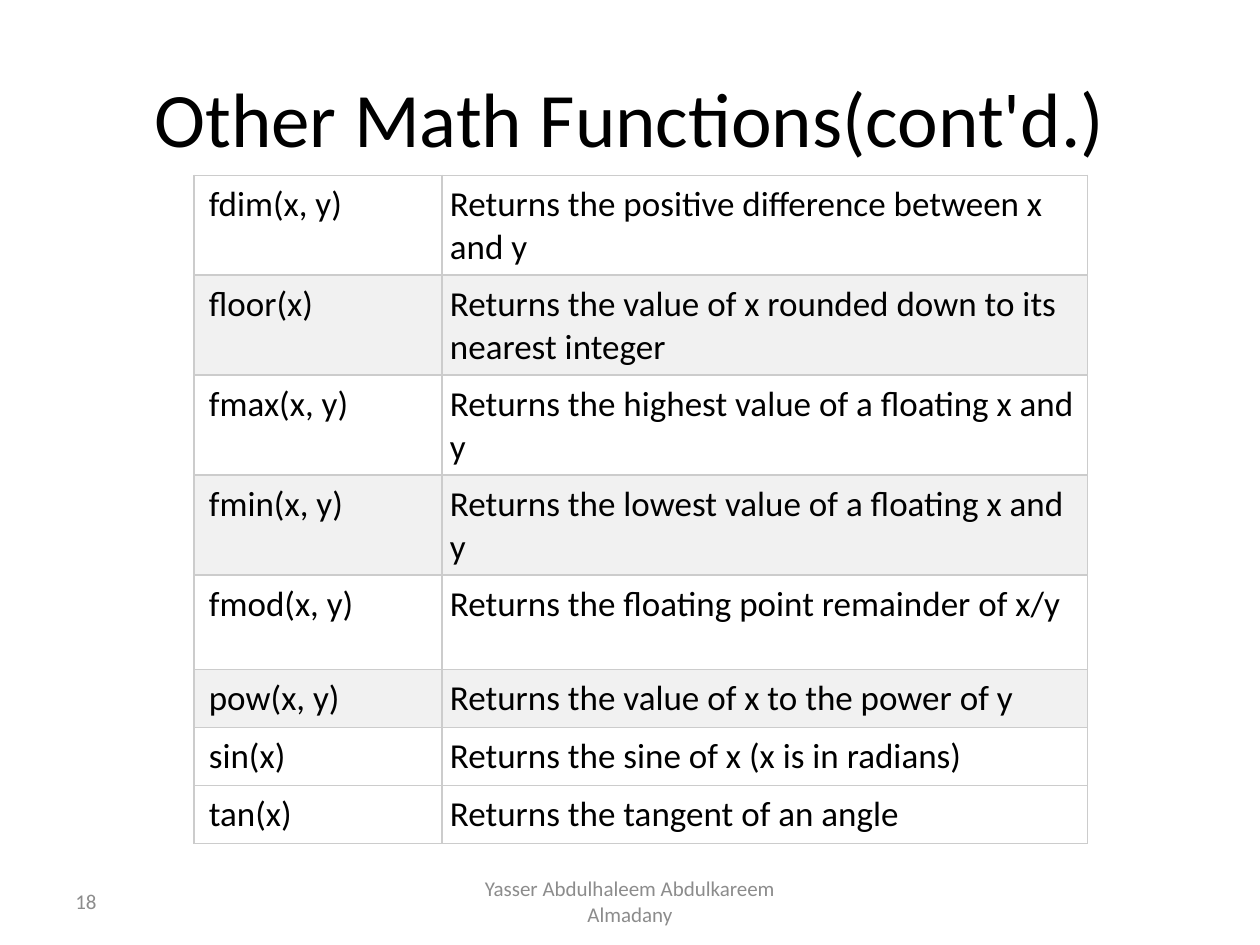
from lxml.etree import SubElement
from pptx import Presentation
from pptx.dml.color import RGBColor
from pptx.enum.text import MSO_ANCHOR, PP_ALIGN
from pptx.oxml.ns import qn
from pptx.util import Cm, Pt

# Content
TITLE = "Other Math Functions(cont'd.)"
AUTHOR = "Yasser Abdulhaleem Abdulkareem Almadany"
PAGE_NUMBER = "18"
# name, description, row height in cm, shaded
FUNCTIONS = [
    ("fdim(x, y)", "Returns the positive difference between x and y", 1.9, False),
    ("floor(x)", "Returns the value of x rounded down to its nearest integer", 1.9, True),
    ("fmax(x, y)", "Returns the highest value of a floating x and y", 1.9, False),
    ("fmin(x, y)", "Returns the lowest value of a floating x and y", 1.9, True),
    ("fmod(x, y)", "Returns the floating point remainder of x/y", 1.9, False),
    ("pow(x, y)", "Returns the value of x to the power of y", 1.17, True),
    ("sin(x)", "Returns the sine of x (x is in radians)", 1.17, False),
    ("tan(x)", "Returns the tangent of an angle", 1.17, False),
]

THEME = {
    "font": "Calibri",
    "title": (44, "000000"),
    "cell": (20, "000000"),
    "footer": (12, "8C8C8C"),
    "plain": "FFFFFF",
    "shaded": "F1F1F1",
    "border": "CCCCCC",
    "border_width": Pt(0.75),
}
COLUMNS = (5, 13.01)
LEFT_INSETS = (0.3, 0.16)
INSET = Cm(0.16)


def write(frame, text, style, align):
    size, color = THEME[style]
    para = frame.paragraphs[0]
    para.alignment = align
    span = para.add_run()
    span.text = text
    span.font.name = THEME["font"]
    span.font.size = Pt(size)
    span.font.color.rgb = RGBColor.from_string(color)


def add_text(page, area, text, style, align):
    box = page.shapes.add_textbox(*(Cm(length) for length in area))
    frame = box.text_frame
    frame.word_wrap = True
    frame.vertical_anchor = MSO_ANCHOR.MIDDLE
    write(frame, text, style, align)


def add_borders(cell):
    properties = cell._tc.get_or_add_tcPr()
    for side in ("a:lnL", "a:lnR", "a:lnT", "a:lnB"):
        line = SubElement(properties, qn(side), w=str(THEME["border_width"]))
        fill = SubElement(line, qn("a:solidFill"))
        SubElement(fill, qn("a:srgbClr"), val=THEME["border"])


def add_function_table(page):
    height = sum(row[2] for row in FUNCTIONS)
    table = page.shapes.add_table(
        len(FUNCTIONS), len(COLUMNS),
        Cm(3.91), Cm(3.53), Cm(sum(COLUMNS)), Cm(height)).table
    table.first_row = False
    table.horz_banding = False
    for column, width in zip(table.columns, COLUMNS):
        column.width = Cm(width)
    for row, (name, description, row_height, shaded) in zip(table.rows, FUNCTIONS):
        row.height = Cm(row_height)
        for cell, text, left in zip(row.cells, (name, description), LEFT_INSETS):
            cell.margin_left = Cm(left)
            cell.margin_right = cell.margin_top = cell.margin_bottom = INSET
            add_borders(cell)
            cell.fill.solid()
            color = THEME["shaded" if shaded else "plain"]
            cell.fill.fore_color.rgb = RGBColor.from_string(color)
            write(cell.text_frame, text, "cell", PP_ALIGN.LEFT)


def main():
    deck = Presentation()
    deck.slide_width, deck.slide_height = Cm(25.4), Cm(19.05)
    page = deck.slides.add_slide(deck.slide_layouts[6])

    # Title
    add_text(page, (1.27, 0.76, 22.86, 3.18), TITLE, "title", PP_ALIGN.CENTER)

    # Footer
    add_text(page, (8.68, 17.66, 8.04, 1.01), AUTHOR, "footer", PP_ALIGN.CENTER)
    add_text(page, (1.27, 17.66, 5.93, 1.01), PAGE_NUMBER, "footer", PP_ALIGN.LEFT)

    # Function table
    add_function_table(page)
    deck.save("out.pptx")


if __name__ == "__main__":
    main()
